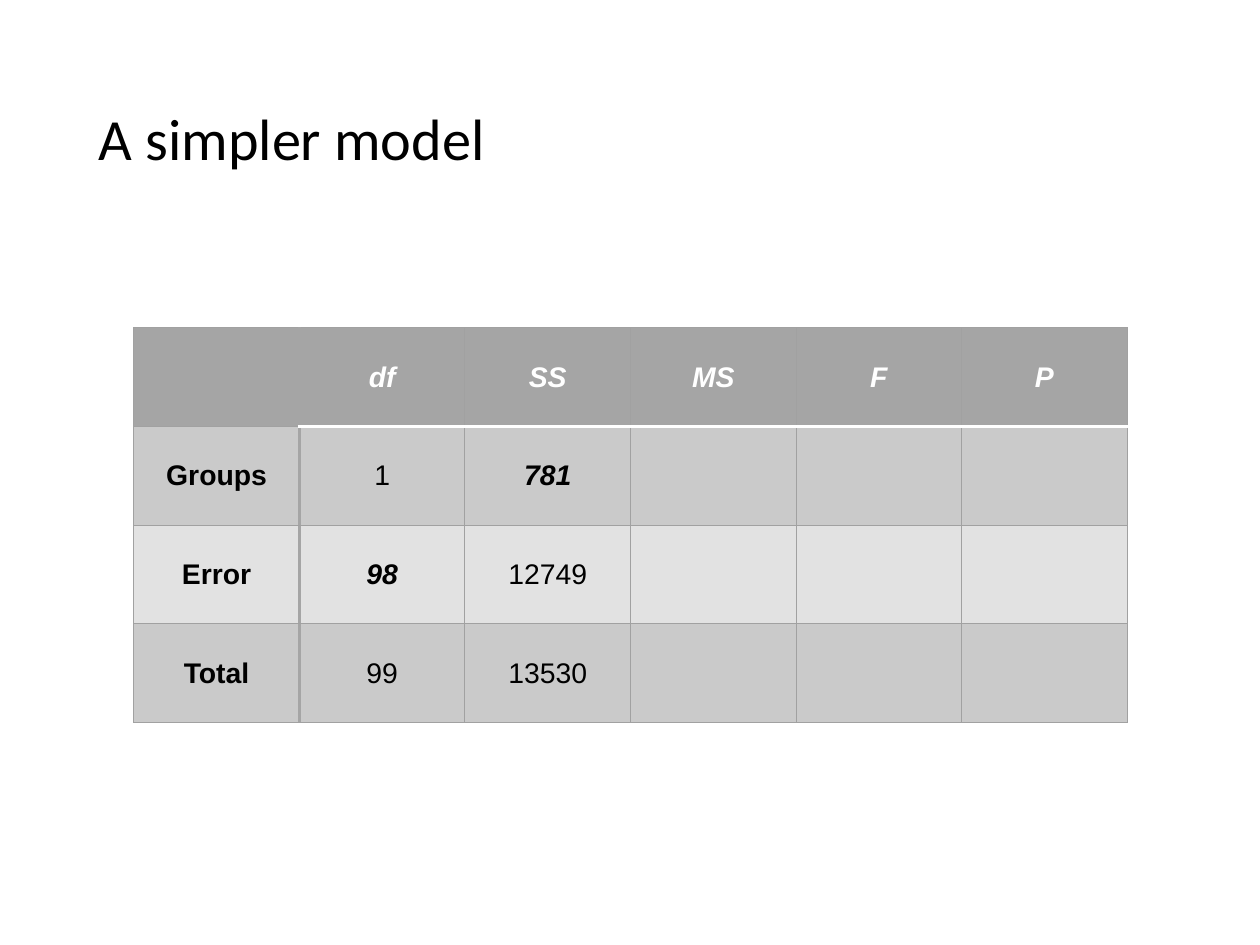
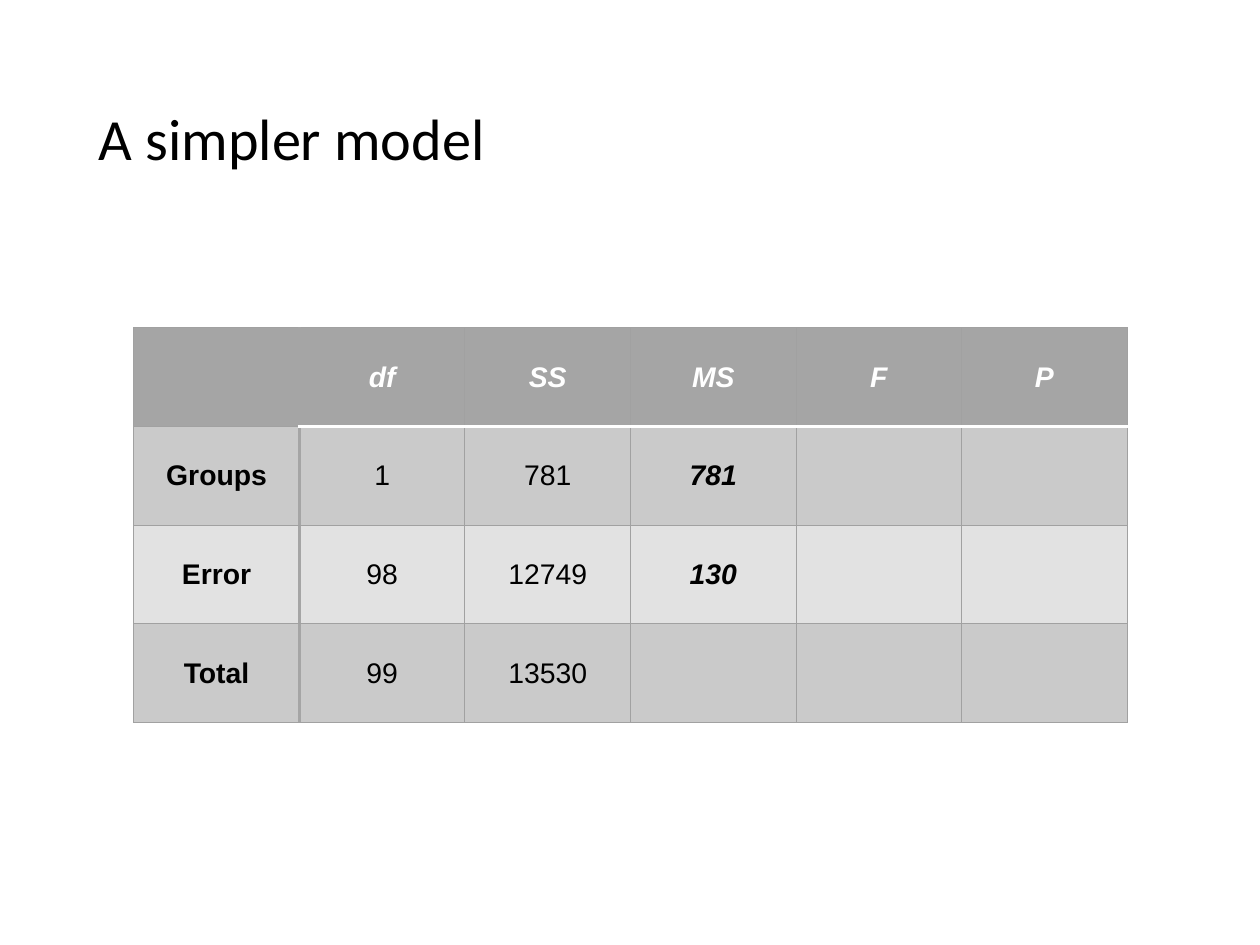
from lxml.etree import SubElement
from pptx import Presentation
from pptx.dml.color import RGBColor
from pptx.enum.text import MSO_ANCHOR, PP_ALIGN
from pptx.oxml.ns import qn
from pptx.util import Inches, Pt

# Shared style
BLACK = RGBColor(0x00, 0x00, 0x00)
WHITE = RGBColor(0xFF, 0xFF, 0xFF)
HEADER_GREY = RGBColor(0xA5, 0xA5, 0xA5)
GRID_GREY = RGBColor(0xA1, 0xA1, 0xA1)
DARK_BAND = RGBColor(0xCA, 0xCA, 0xCA)
LIGHT_BAND = RGBColor(0xE2, 0xE2, 0xE2)
TITLE_FONT, TABLE_FONT = "Calibri", "Arial"
THIN, THICK = 0.75, 2
TITLE_ONLY = 5

# Table content: the cells solved on each slide are (row, column) positions
HEADER = ["", "df", "SS", "MS", "F", "P"]
SUMS_OF_SQUARES = [
    HEADER,
    ["Groups", "1", "781", "", "", ""],
    ["Error", "98", "12749", "", "", ""],
    ["Total", "99", "13530", "", "", ""],
]
MEAN_SQUARES = [
    HEADER,
    ["Groups", "1", "781", "781", "", ""],
    ["Error", "98", "12749", "130", "", ""],
    ["Total", "99", "13530", "", "", ""],
]
SLIDES = [
    (SUMS_OF_SQUARES, {(1, 2), (2, 1)}),
    (MEAN_SQUARES, {(1, 3), (2, 3)}),
]


def add_title(page, text):
    title = page.shapes.title
    title.left, title.top = Inches(0.76), Inches(0.44)
    title.width, title.height = Inches(9.58), Inches(1.61)
    frame = title.text_frame
    frame.text = text
    frame.word_wrap = True
    frame.vertical_anchor = MSO_ANCHOR.MIDDLE
    frame.margin_left = frame.margin_right = Inches(0.11)
    frame.margin_top = frame.margin_bottom = Inches(0.11)
    para = frame.paragraphs[0]
    para.alignment = PP_ALIGN.LEFT
    para.line_spacing = 0.9
    para.font.name = TITLE_FONT
    para.font.size = Pt(37)
    para.font.color.rgb = BLACK


def set_borders(cell, row, column):
    """Thin grid, with a white rule under the header and a thick first divider."""
    left = right = top = bottom = (GRID_GREY, THIN)
    if column == 0:
        right = (HEADER_GREY, THICK)
    elif column == 1:
        left = (HEADER_GREY, THICK)
    if column > 0 and row == 0:
        bottom = (WHITE, THICK)
    elif column > 0 and row == 1:
        top = (WHITE, THICK)

    properties = cell._tc.get_or_add_tcPr()
    sides = {"a:lnL": left, "a:lnR": right, "a:lnT": top, "a:lnB": bottom}
    for tag, (color, width) in sides.items():
        line = SubElement(properties, qn(tag), w=str(Pt(width)))
        fill = SubElement(line, qn("a:solidFill"))
        SubElement(fill, qn("a:srgbClr"), val=str(color))


def format_cell(cell, row, column, text, solved):
    is_header = row == 0
    set_borders(cell, row, column)
    cell.fill.solid()
    if is_header:
        cell.fill.fore_color.rgb = HEADER_GREY
    else:
        cell.fill.fore_color.rgb = DARK_BAND if row % 2 else LIGHT_BAND

    cell.text = text
    cell.vertical_anchor = MSO_ANCHOR.MIDDLE
    para = cell.text_frame.paragraphs[0]
    para.alignment = PP_ALIGN.CENTER
    para.font.name = TABLE_FONT
    para.font.size = Pt(18)
    para.font.bold = is_header or column == 0 or solved
    para.font.italic = is_header or solved
    para.font.color.rgb = WHITE if is_header else BLACK


def add_anova_table(page, rows, solved_cells):
    frame = page.shapes.add_table(len(rows), len(HEADER), Inches(1.18),
                                  Inches(2.89), Inches(8.76), Inches(3.48))
    table = frame.table
    for row, texts in enumerate(rows):
        for column, text in enumerate(texts):
            format_cell(table.cell(row, column), row, column, text,
                        (row, column) in solved_cells)


def main():
    deck = Presentation()
    deck.slide_width, deck.slide_height = Inches(11.11), Inches(8.33)
    for rows, solved_cells in SLIDES:
        page = deck.slides.add_slide(deck.slide_layouts[TITLE_ONLY])
        add_title(page, "A simpler model")
        add_anova_table(page, rows, solved_cells)
    deck.save("out.pptx")


if __name__ == "__main__":
    main()
